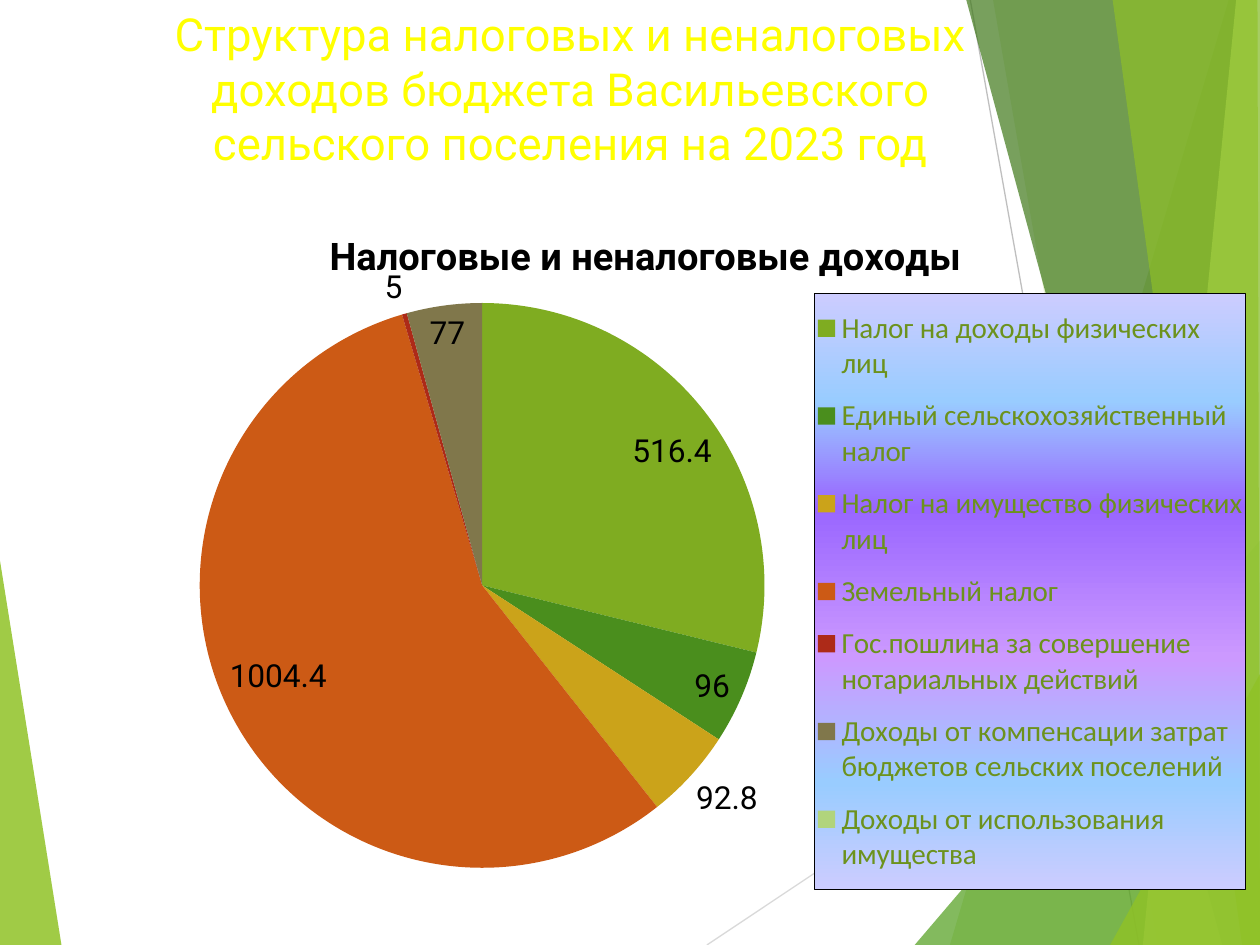
from lxml import etree
from pptx import Presentation
from pptx.chart.data import CategoryChartData
from pptx.dml.color import RGBColor
from pptx.enum.chart import XL_CHART_TYPE as ChartType, XL_LABEL_POSITION as LabelPos
from pptx.enum.chart import XL_LEGEND_POSITION as LegendPos
from pptx.enum.shapes import MSO_CONNECTOR as Connector
from pptx.enum.text import MSO_ANCHOR as Anchor, MSO_AUTO_SIZE as AutoSize, PP_ALIGN as Align
from pptx.oxml import parse_xml
from pptx.oxml.ns import nsdecls, qn
from pptx.util import Cm, Pt

W, H = 25.4, 19.05


def rgb(code):
    return RGBColor.from_string(code)


def manual_layout(x, y, w=None, h=None, inner=False):
    """Return a c:layout element; lengths are fractions of the chart area."""
    target = '<c:layoutTarget val="inner"/>' if inner else ""
    sizes = "".join(f'<c:{n} val="{v}"/>' for n, v in (("w", w), ("h", h)) if v)
    return parse_xml(
        f'<c:layout {nsdecls("c")}><c:manualLayout>{target}'
        '<c:xMode val="edge"/><c:yMode val="edge"/>'
        f'<c:x val="{x}"/><c:y val="{y}"/>{sizes}</c:manualLayout></c:layout>')


prs = Presentation()
prs.slide_width, prs.slide_height = Cm(W), Cm(H)
slide = prs.slides.add_slide(prs.slide_layouts[5])
shapes = slide.shapes

# Background lines and translucent facets: colour, opacity in percent, corners in cm
for x1, y1, x2, y2, color in [(14.25, H, W, 11.61, "D9D9D9"),
                              (19.56, 0, 22.96, H, "BFBFBF")]:
    ray = shapes.add_connector(Connector.STRAIGHT, Cm(x1), Cm(y1), Cm(x2), Cm(y2))
    ray.line.color.rgb = rgb(color)
    ray.line.width = Pt(0.75)
    etree.SubElement(ray._element.spPr, qn("a:effectLst"))

facets = [
    ("90C226", 85, [(0, 11.3), (1.24, H), (0, H)]),
    ("90C226", 30, [(24.77, 0), (19.15, H), (W, H), (W, 0)]),
    ("90C226", 20, [(20.02, 0), (23.34, H), (W, H), (W, 0)]),
    ("54A021", 72, [(18.44, H), (W, 10.9), (W, H)]),
    ("3F7819", 70, [(19.48, 0), (24.64, H), (W, H), (W, 0)]),
    ("C0E474", 70, [(24.92, 0), (23.04, H), (W, H), (W, 0)]),
    ("90C226", 65, [(22.43, 0), (25.04, H), (W, H), (25.35, 0)]),
    ("90C226", 80, [(22.38, H), (W, 13.59), (W, H)]),
]
for color, opacity, corners in facets:
    start, *rest = [(Cm(x), Cm(y)) for x, y in corners]
    outline = shapes.build_freeform(*start)
    outline.add_line_segments(rest)
    facet = outline.convert_to_shape()
    facet.shadow.inherit = False
    facet.line.fill.background()
    facet.fill.solid()
    facet.fill.fore_color.rgb = rgb(color)
    tint = facet._element.spPr.find(".//" + qn("a:srgbClr"))
    etree.SubElement(tint, qn("a:alpha"), val=str(opacity * 1000))

# Heading, brought in front of the facets
heading = shapes.title
heading.left, heading.top, heading.width, heading.height = Cm(1.7), Cm(0), Cm(19.61), Cm(3.89)
frame = heading.text_frame
frame.text = ("Структура налоговых и неналоговых доходов бюджета "
              "Васильевского сельского поселения на 2023 год")
frame.auto_size = AutoSize.NONE
frame.vertical_anchor = Anchor.TOP
paragraph = frame.paragraphs[0]
paragraph.alignment = Align.CENTER
paragraph.font.name, paragraph.font.size = "Roboto", Pt(26)
paragraph.font.color.rgb = rgb("FFFF00")
shapes._spTree.append(heading._element)

# Revenue pie: category, value, slice colour
revenues = [
    ("Налог на доходы физических лиц", 516.4, "7FAC21"),
    ("Единый сельскохозяйственный налог", 96, "4A8E1D"),
    ("Налог на имущество физических лиц", 92.8, "CBA31A"),
    ("Земельный налог", 1004.4, "CC5A15"),
    ("Гос.пошлина за совершение нотариальных действий", 5, "AD2A18"),
    ("Доходы от компенсации затрат бюджетов сельских поселений", 77, "80774B"),
    ("Доходы от использования имущества", 0, "B1D47C"),
]
names, amounts, colors = zip(*revenues)
data = CategoryChartData()
data.categories = names
data.add_series("Налоговые и неналоговые доходы", amounts)
chart = shapes.add_chart(ChartType.PIE, Cm(0.86), Cm(4.11), Cm(24.54), Cm(14.05), data).chart
chart.font.name, chart.font.size = "Roboto", Pt(18.1)
chart.font.color.rgb = rgb("000000")

chart.has_title = True
caption = chart.chart_title.text_frame
caption.text = "Налоговые и неналоговые доходы"
caption_font = caption.paragraphs[0].font
caption_font.name, caption_font.size, caption_font.bold = "Roboto", Pt(21.7), True
caption_font.color.rgb = rgb("000000")
title_xml = chart.chart_title._element
for old in title_xml.findall(qn("c:layout")):
    title_xml.remove(old)
title_xml.find(qn("c:tx")).addnext(manual_layout(0.23, 0.028))

plot = chart.plots[0]
plot.vary_by_categories = True
plot_area = plot._element.getparent()
for old in plot_area.findall(qn("c:layout")):
    plot_area.remove(old)
plot_area.insert(0, manual_layout(0.129, 0.142, 0.464, 0.811, inner=True))
series = plot.series[0]
for index, color in enumerate(colors):
    fill = series.points[index].format.fill
    fill.solid()
    fill.fore_color.rgb = rgb(color)
labels = series.data_labels
labels.show_value = True
labels.show_percentage = False
labels.number_format, labels.number_format_is_linked = "General", False
labels.position = LabelPos.BEST_FIT
for index, amount in enumerate(amounts):
    if not amount:
        labels._element.insert(0, parse_xml(
            f'<c:dLbl {nsdecls("c")}><c:idx val="{index}"/><c:delete val="1"/></c:dLbl>'))

chart.has_legend = True
legend = chart.legend
legend.position = LegendPos.RIGHT
legend.include_in_layout = False
legend.font.name, legend.font.size = "Calibri", Pt(16.6)
legend.font.color.rgb = rgb("6C921D")
legend_xml = legend._element
for old in legend_xml.findall(qn("c:layout")):
    legend_xml.remove(old)
legend_xml.find(qn("c:legendPos")).addnext(manual_layout(0.634, 0.129, 0.354, 0.855))
stops = [(0, "CCCCFF"), (18, "99CCFF"), (36, "9966FF"),
         (61, "CC99FF"), (82, "99CCFF"), (100, "CCCCFF")]
stops_xml = "".join(f'<a:gs pos="{pos * 1000}"><a:srgbClr val="{color}"/></a:gs>'
                    for pos, color in stops)
legend_xml.find(qn("c:txPr")).addprevious(parse_xml(
    f'<c:spPr {nsdecls("c", "a")}><a:gradFill><a:gsLst>{stops_xml}</a:gsLst>'
    '<a:lin ang="5400000" scaled="0"/></a:gradFill>'
    '<a:ln w="9525"><a:solidFill><a:srgbClr val="000000"/></a:solidFill></a:ln></c:spPr>'))

prs.save("out.pptx")
